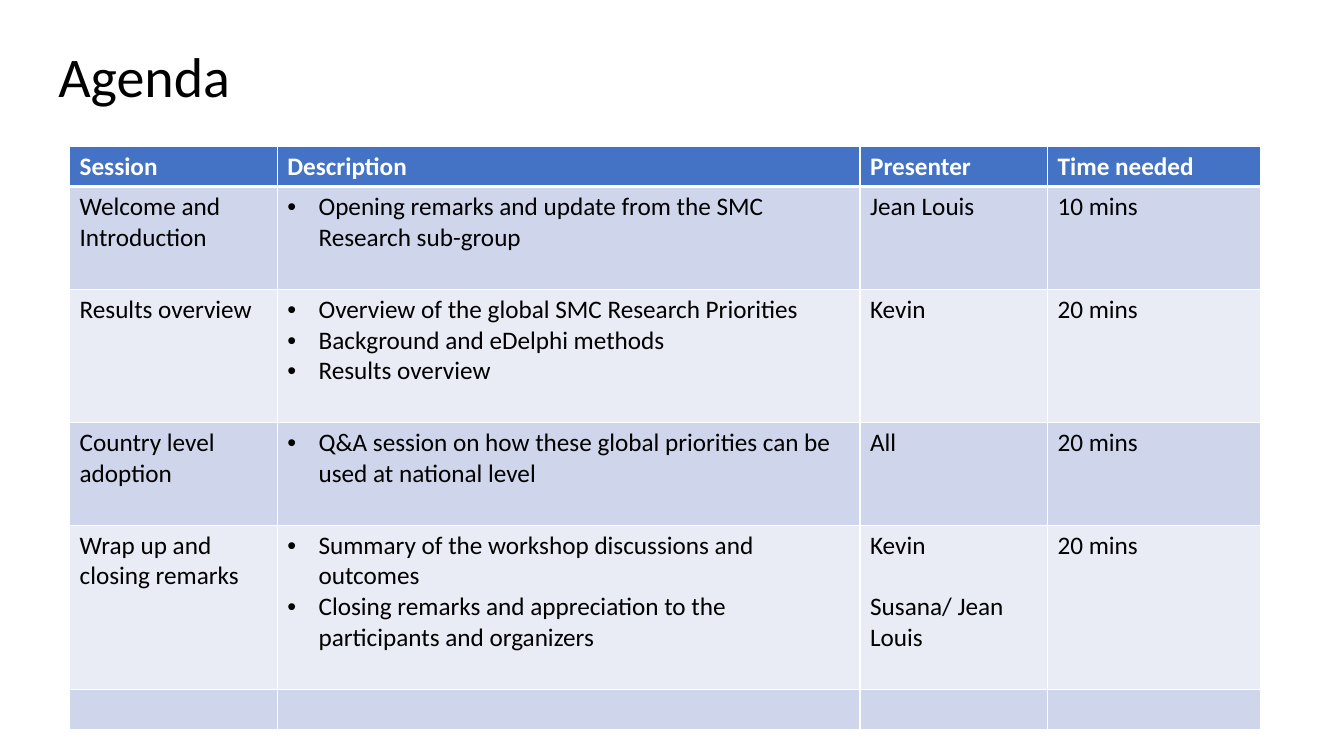
from lxml.etree import SubElement
from pptx import Presentation
from pptx.dml.color import RGBColor
from pptx.enum.text import MSO_ANCHOR
from pptx.oxml.ns import qn
from pptx.util import Inches, Pt

BLACK = RGBColor(0, 0, 0)
WHITE = RGBColor(0xFF, 0xFF, 0xFF)
HEADER_BLUE = RGBColor(0x44, 0x72, 0xC4)
BANDS = [RGBColor(0xE9, 0xEB, 0xF5), RGBColor(0xCF, 0xD5, 0xEA)]
FONT = "Calibri"
BODY_SIZE = 18
LINE_PITCH = 22  # points taken by one line of body text
BULLET_INDENT = Inches(0.31)
DESCRIPTION = 1  # index of the bulleted column

COLUMN_WIDTHS = [2.06, 5.78, 1.86, 2.11]
ROW_HEIGHTS = [0.4, 1.02, 1.32, 1.02, 1.63, 0.4]

# Each cell is a list of paragraphs
AGENDA = [
    [["Session"], ["Description"], ["Presenter"], ["Time needed"]],
    [["Welcome and Introduction"],
     ["Opening remarks and update from the SMC Research sub-group"],
     ["Jean Louis"], ["10 mins"]],
    [["Results overview"],
     ["Overview of the global SMC Research Priorities",
      "Background and eDelphi methods",
      "Results overview"],
     ["Kevin"], ["20 mins"]],
    [["Country level adoption"],
     ["Q&A session on how these global priorities can be used at national level"],
     ["All"], ["20 mins"]],
    [["Wrap up and closing remarks"],
     ["Summary of the workshop discussions and outcomes",
      "Closing remarks and appreciation to the participants and organizers"],
     ["Kevin", "Susana/ Jean Louis"], ["20 mins"]],
    [[], [], [], []],
]


def add_span(para, text, size, color, bold=False):
    span = para.add_run()
    span.text = text
    span.font.name = FONT
    span.font.size = Pt(size)
    span.font.bold = bold
    span.font.color.rgb = color


def add_bullet(para):
    props = para._p.get_or_add_pPr()
    props.set("marL", str(BULLET_INDENT))
    props.set("indent", str(-BULLET_INDENT))
    SubElement(props, qn("a:buFont"), typeface="Arial")
    SubElement(props, qn("a:buChar"), char="•")


def set_borders(cell, top, bottom):
    props = cell._tc.get_or_add_tcPr()
    for side, width in (("L", 1), ("R", 1), ("T", top), ("B", bottom)):
        line = SubElement(props, qn(f"a:ln{side}"), w=str(Pt(width)))
        fill = SubElement(line, qn("a:solidFill"))
        SubElement(fill, qn("a:srgbClr"), val=str(WHITE))


def fill_cell(cell, lines, row, column):
    header = row == 0
    set_borders(cell, top=3 if row == 1 else 1, bottom=3 if header else 1)
    cell.fill.solid()
    cell.fill.fore_color.rgb = HEADER_BLUE if header else BANDS[row % 2]
    frame = cell.text_frame
    for number, text in enumerate(lines):
        para = frame.add_paragraph() if number else frame.paragraphs[0]
        if column == DESCRIPTION and not header:
            add_bullet(para)
        elif number:
            para.space_before = Pt(LINE_PITCH)
        add_span(para, text, BODY_SIZE, WHITE if header else BLACK, header)


def add_title(page, left, top, width, height):
    box = page.shapes.add_textbox(left, top, width, height)
    frame = box.text_frame
    frame.word_wrap = True
    frame.vertical_anchor = MSO_ANCHOR.MIDDLE
    para = frame.paragraphs[0]
    para.line_spacing = 0.9
    add_span(para, "Agenda", 40, BLACK)


def add_agenda(page, left, top):
    table = page.shapes.add_table(
        len(ROW_HEIGHTS), len(COLUMN_WIDTHS), left, top,
        Inches(sum(COLUMN_WIDTHS)), Inches(sum(ROW_HEIGHTS))).table
    for column, width in zip(table.columns, COLUMN_WIDTHS):
        column.width = Inches(width)
    for row, height in zip(table.rows, ROW_HEIGHTS):
        row.height = Inches(height)
    for row, cells in enumerate(AGENDA):
        for column, lines in enumerate(cells):
            fill_cell(table.cell(row, column), lines, row, column)


def main():
    deck = Presentation()
    deck.slide_width = Inches(13.33)
    deck.slide_height = Inches(7.5)
    page = deck.slides.add_slide(deck.slide_layouts[6])
    add_title(page, Inches(0.48), Inches(0.42), Inches(9.86), Inches(0.73))
    add_agenda(page, Inches(0.69), Inches(1.45))
    deck.save("out.pptx")


if __name__ == "__main__":
    main()
